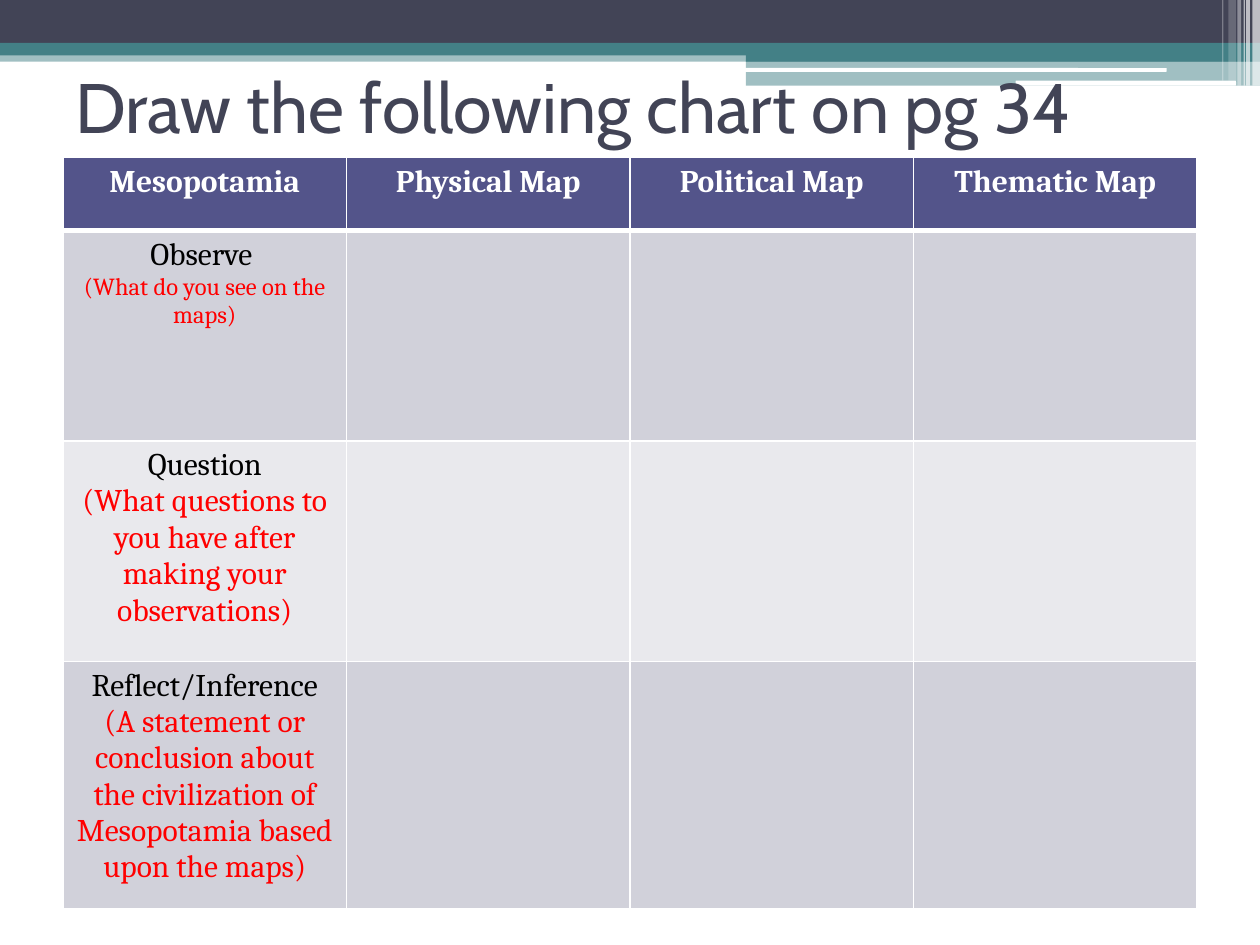
from lxml import etree
from pptx import Presentation
from pptx.dml.color import RGBColor
from pptx.enum import shapes, text
from pptx.oxml.ns import qn
from pptx.util import Inches, Pt

THEME = {
    "dark": "424456", "teal": "438086", "white": "FFFFFF",
    "head": "53548A", "bands": ("D1D1DA", "E9E9ED"),
    "ink": "000000", "hint": "FF0000",
    "title_font": "Cabin", "body_font": "Cambria",
    "title": 40, "body": 18, "small": 14,
}

TITLE = "Draw the following chart on pg 34"
HEADS = ["Mesopotamia", "Physical Map", "Political Map", "Thematic Map"]
# row label, hint, hint size, row height
ROWS = [
    ("Observe ", "(What do you see on the maps)", "small", 1.67),
    ("Question", "(What questions to you have after making your observations)",
     "body", 1.75),
    ("Reflect/Inference", "(A statement or conclusion about the civilization of "
     "Mesopotamia based upon the maps)", "body", 1.96),
]
HEAD_H = 0.58
COL_W = 2.25

# left, top, width, height, colour, opacity
BANDS = [
    (0, 0.4, 10, 0.09, "teal", 50),
    (0, 0, 10, 0.34, "dark", 100),
    (0, 0.34, 10, 0.1, "teal", 100),
    (5.92, 0.39, 4.08, 0.1, "teal", 100),
    (5.92, 0.48, 4.08, 0.2, "teal", 50),
]
PILLS = [(5.91, 0.54, 3.35, 0.03), (8.06, 0.64, 1.75, 0.04)]
# left, width, height, opacity
STRIPES = [
    (9.94, 0.06, 0.68, 65), (9.89, 0.03, 0.68, 65), (9.87, 0.01, 0.68, 60),
    (9.82, 0.03, 0.68, 40), (9.75, 0.06, 0.64, 20), (9.7, 0.01, 0.64, 30),
]


def rgb(name):
    return RGBColor.from_string(THEME[name])


def add_bar(slide, box, color, alpha=100, kind="RECTANGLE"):
    bar = slide.shapes.add_shape(getattr(shapes.MSO_SHAPE, kind),
                                 *[Inches(n) for n in box])
    bar.shadow.inherit = False
    bar.line.fill.background()
    bar.fill.solid()
    bar.fill.fore_color.rgb = rgb(color)
    if alpha < 100:
        tint = bar.fill._xPr.find(qn("a:solidFill"))[0]
        etree.SubElement(tint, qn("a:alpha"), val=str(alpha * 1000))


def write(para, words, color, size="body", face="body_font", bold=False):
    run = para.add_run()
    run.text = words
    style = {"name": THEME[face], "size": Pt(THEME[size]), "bold": bold}
    for key, val in style.items():
        setattr(run.font, key, val)
    run.font.color.rgb = rgb(color)


def edge(cell, widths):
    """Give the cell white borders, with a width in points for each side."""
    props = cell._tc.get_or_add_tcPr()
    for side, width in widths.items():
        line = etree.SubElement(props, qn("a:ln" + side), w=str(Pt(width)))
        fill = etree.SubElement(line, qn("a:solidFill"))
        etree.SubElement(fill, qn("a:srgbClr"), val=THEME["white"])


def add_title(slide):
    title = slide.shapes.title
    box = {"left": 0.5, "top": 0.25, "width": 9, "height": 1.17}
    for key, val in box.items():
        setattr(title, key, Inches(val))
    title.text_frame.vertical_anchor = text.MSO_ANCHOR.MIDDLE
    para = title.text_frame.paragraphs[0]
    para.alignment = text.PP_ALIGN.LEFT
    write(para, TITLE, "dark", "title", "title_font")
    slide.shapes._spTree.append(title._element)  # in front of the bars


def add_grid(slide):
    heights = [HEAD_H] + [row[-1] for row in ROWS]
    table = slide.shapes.add_table(
        len(heights), len(HEADS), Inches(0.5), Inches(1.25),
        Inches(COL_W * len(HEADS)), Inches(sum(heights))).table
    for col in table.columns:
        col.width = Inches(COL_W)
    for r, height in enumerate(heights):
        table.rows[r].height = Inches(height)
        fill = THEME["bands"][(r - 1) % 2] if r else THEME["head"]
        for cell in table.rows[r].cells:
            edge(cell, {"L": 1, "R": 1, "T": 3 if r == 1 else 1,
                        "B": 1 if r else 3})
            cell.fill.solid()
            cell.fill.fore_color.rgb = RGBColor.from_string(fill)
    for c, head in enumerate(HEADS):
        para = table.cell(0, c).text_frame.paragraphs[0]
        para.alignment = text.PP_ALIGN.CENTER
        write(para, head, "white", bold=True)
    for r, (label, hint, size, _) in enumerate(ROWS, 1):
        frame = table.cell(r, 0).text_frame
        first, second = frame.paragraphs[0], frame.add_paragraph()
        first.alignment = second.alignment = text.PP_ALIGN.CENTER
        write(first, label, "ink")
        write(second, hint, "hint", size)


def main():
    deck = Presentation()
    deck.slide_width, deck.slide_height = Inches(10), Inches(7.5)
    slide = deck.slides.add_slide(deck.slide_layouts[5])
    for *box, color, alpha in BANDS:
        add_bar(slide, box, color, alpha)
    for box in PILLS:
        add_bar(slide, box, "white", kind="ROUNDED_RECTANGLE")
    for left, width, height, alpha in STRIPES:
        add_bar(slide, (left, 0, width, height), "white", alpha)
    add_title(slide)
    add_grid(slide)
    deck.save("out.pptx")


if __name__ == "__main__":
    main()
